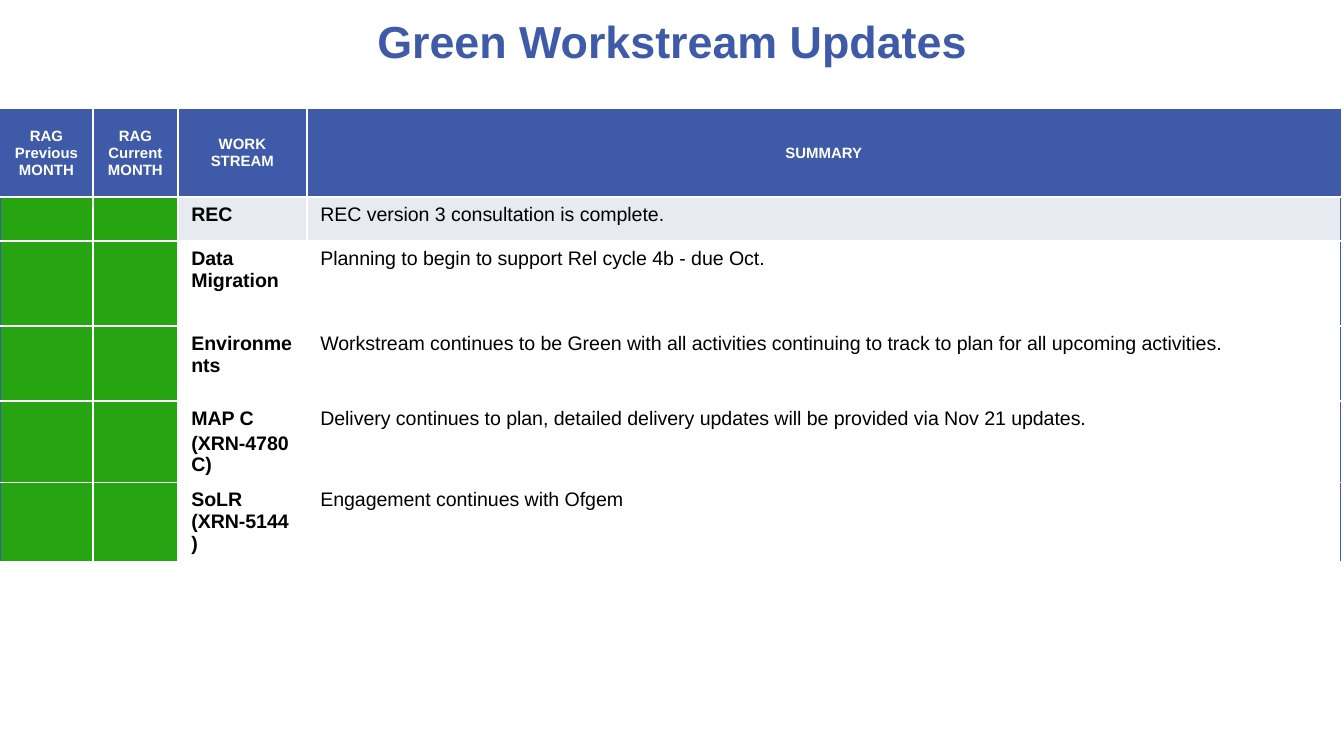
from dataclasses import dataclass

from pptx import Presentation
from pptx.dml.color import RGBColor
from pptx.enum.text import MSO_ANCHOR, PP_ALIGN
from pptx.oxml.ns import qn
from pptx.util import Emu, Pt
from lxml.etree import SubElement


@dataclass(frozen=True)
class Theme:
    font: str = "Arial"
    blue: str = "3E5AA8"
    green: str = "26A412"
    band: str = "E8EAF1"
    white: str = "FFFFFF"
    black: str = "000000"
    title_size: float = 24
    header_size: float = 8
    body_size: float = 10.5
    inner_border: float = 1
    outer_border: float = 0.5


@dataclass(frozen=True)
class TextStyle:
    size: float
    color: str
    bold: bool
    align: PP_ALIGN = PP_ALIGN.LEFT
    anchor: MSO_ANCHOR = MSO_ANCHOR.TOP
    gap: float = 0


@dataclass(frozen=True)
class Workstream:
    name: tuple[str, ...]
    summary: str
    height: int
    fill: str
    gap: float = 0


THEME = Theme()
EMU_PER_PX = 914400 / 134.4
COLUMNS = (93, 85, 129, 1034)
HEADER_HEIGHT = 88
HEADERS = (
    ("RAG", "Previous", "MONTH"),
    ("RAG", "Current", "MONTH"),
    ("WORK", "STREAM"),
    ("SUMMARY",),
)
WORKSTREAMS = (
    Workstream(("REC",), "REC version 3 consultation is complete.", 44, THEME.band),
    Workstream(("Data", "Migration"),
               "Planning to begin to support Rel cycle 4b - due Oct.", 85, THEME.white),
    Workstream(("Environments",),
               "Workstream continues to be Green with all activities continuing "
               "to track to plan for all upcoming activities.", 75, THEME.white),
    Workstream(("MAP C", "(XRN-4780C)"),
               "Delivery continues to plan, detailed delivery updates will be "
               "provided via Nov 21 updates.", 75, THEME.white, gap=1.6),
    Workstream(("SoLR (XRN-5144)",), "Engagement continues with Ofgem", 75, THEME.white),
)


def px(length: int) -> Emu:
    return Emu(round(length * EMU_PER_PX))


def write(frame, lines: tuple[str, ...], style: TextStyle) -> None:
    for index, line in enumerate(lines):
        paragraph = frame.add_paragraph() if index else frame.paragraphs[0]
        paragraph.alignment = style.align
        if index and style.gap:
            paragraph.space_before = Pt(style.gap)
        run = paragraph.add_run()
        run.text = line
        run.font.name = THEME.font
        run.font.size = Pt(style.size)
        run.font.bold = style.bold
        run.font.color.rgb = RGBColor.from_string(style.color)


def draw_borders(cell, outer_sides: set[str]) -> None:
    properties = cell._tc.get_or_add_tcPr()
    for side in "LRTB":
        outer = side in outer_sides
        width = THEME.outer_border if outer else THEME.inner_border
        line = SubElement(properties, qn(f"a:ln{side}"), w=str(Pt(width)))
        fill = SubElement(line, qn("a:solidFill"))
        SubElement(fill, qn("a:srgbClr"), val=THEME.blue if outer else THEME.white)


def draw_cell(table, row: int, column: int, fill: str,
              lines: tuple[str, ...], style: TextStyle) -> None:
    cell = table.cell(row, column)
    outer_sides = {side for side, at_edge in (
        ("L", column == 0),
        ("R", column == len(COLUMNS) - 1),
        ("T", row == 0),
    ) if at_edge}
    draw_borders(cell, outer_sides)
    cell.fill.solid()
    cell.fill.fore_color.rgb = RGBColor.from_string(fill)
    cell.vertical_anchor = style.anchor
    if lines:
        write(cell.text_frame, lines, style)
    else:
        cell.text_frame.paragraphs[0].font.size = Pt(style.size)


def draw_title(slide) -> None:
    title = slide.shapes.add_textbox(px(67), px(0), px(1210), px(82)).text_frame
    title.word_wrap = True
    title.vertical_anchor = MSO_ANCHOR.MIDDLE
    write(title, ("Green Workstream Updates",),
          TextStyle(THEME.title_size, THEME.blue, True, PP_ALIGN.CENTER))


def draw_status_table(slide) -> None:
    heights = (HEADER_HEIGHT, *(stream.height for stream in WORKSTREAMS))
    table = slide.shapes.add_table(
        len(heights), len(COLUMNS), px(0), px(109), px(sum(COLUMNS)), px(sum(heights))
    ).table
    table.horz_banding = False
    for column, width in zip(table.columns, COLUMNS):
        column.width = px(width)
    for row, height in zip(table.rows, heights):
        row.height = px(height)

    header = TextStyle(THEME.header_size, THEME.white, True,
                       PP_ALIGN.CENTER, MSO_ANCHOR.MIDDLE)
    for column, lines in enumerate(HEADERS):
        draw_cell(table, 0, column, THEME.blue, lines, header)

    summary = TextStyle(THEME.body_size, THEME.black, False)
    for row, stream in enumerate(WORKSTREAMS, start=1):
        name = TextStyle(THEME.body_size, THEME.black, True, gap=stream.gap)
        for rag_column in (0, 1):
            draw_cell(table, row, rag_column, THEME.green, (), summary)
        draw_cell(table, row, 2, stream.fill, stream.name, name)
        draw_cell(table, row, 3, stream.fill, (stream.summary,), summary)


def main() -> None:
    presentation = Presentation()
    presentation.slide_width = px(1344)
    presentation.slide_height = px(756)
    slide = presentation.slides.add_slide(presentation.slide_layouts[6])
    draw_status_table(slide)
    draw_title(slide)
    presentation.save("out.pptx")


if __name__ == "__main__":
    main()
